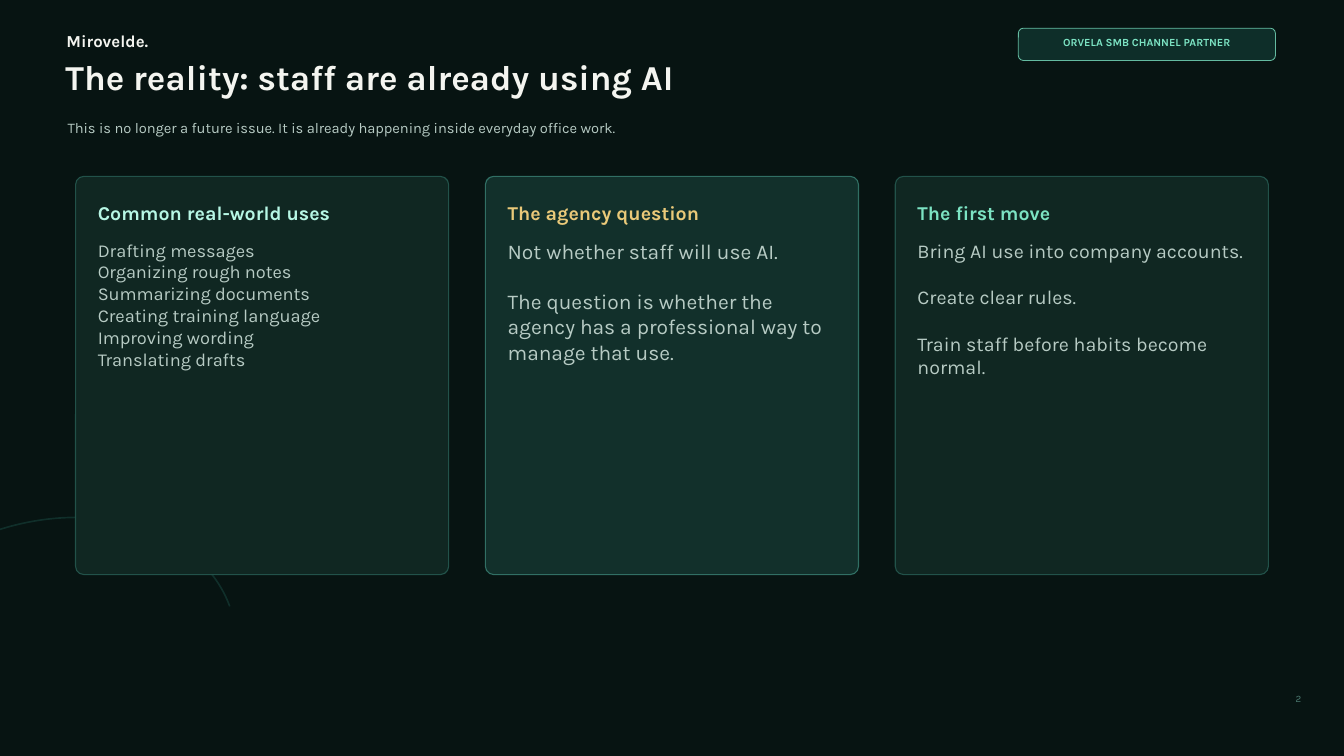
from dataclasses import dataclass

from lxml.etree import SubElement
from pptx import Presentation
from pptx.dml.color import RGBColor
from pptx.enum.shapes import MSO_SHAPE
from pptx.enum.text import MSO_ANCHOR, PP_ALIGN
from pptx.oxml.ns import qn
from pptx.shapes.autoshape import Shape
from pptx.slide import Slide
from pptx.util import Inches, Pt

FONT = "Karla"
NIGHT = RGBColor(0x07, 0x14, 0x12)
ARC = RGBColor(0x12, 0x32, 0x2D)
WHITE = RGBColor(0xF4, 0xF5, 0xF0)
BODY = RGBColor(0xB7, 0xCB, 0xC4)
MINT = RGBColor(0x7C, 0xE3, 0xC3)
PALE_MINT = RGBColor(0xB7, 0xF7, 0xE5)
GOLD = RGBColor(0xEA, 0xC9, 0x79)
PAGE = RGBColor(0x4E, 0x7D, 0x73)
BADGE_FILL = RGBColor(0x0F, 0x2F, 0x2A)
CARD_FILL = RGBColor(0x10, 0x27, 0x22)
CARD_LINE = RGBColor(0x25, 0x58, 0x4F)
FOCUS_FILL = RGBColor(0x12, 0x30, 0x2B)
FOCUS_LINE = RGBColor(0x35, 0x78, 0x6C)

CARD_LEFT, LAST_CARD_LEFT = 0.75, 8.88
CARD_TOP, CARD_W, CARD_H = 1.75, 3.7, 3.95
CARD_PAD = 0.22
LINE_HEIGHT = 1.17  # Karla line height relative to its size

Box = tuple[float, float, float, float]


@dataclass
class Card:
    title: str
    title_color: RGBColor
    lines: list[str]
    size: float
    spaced: bool = True
    fill: RGBColor = CARD_FILL
    line: RGBColor = CARD_LINE


CARDS = [
    Card("Common real-world uses", PALE_MINT,
         ["Drafting messages", "Organizing rough notes", "Summarizing documents",
          "Creating training language", "Improving wording", "Translating drafts"],
         13, spaced=False),
    Card("The agency question", GOLD,
         ["Not whether staff will use AI.",
          "The question is whether the agency has a professional way to manage that use."],
         15, fill=FOCUS_FILL, line=FOCUS_LINE),
    Card("The first move", MINT,
         ["Bring AI use into company accounts.", "Create clear rules.",
          "Train staff before habits become normal."], 14),
]


def set_alpha(sp: Shape, tag: str, percent: int) -> None:
    """Set the opacity of the fill (a:solidFill) or the line (a:ln/a:solidFill)."""
    color = sp.element.spPr.find(tag, sp.element.nsmap)[0]
    SubElement(color, qn("a:alpha"), val=str(percent * 1000))


def add_shape(s: Slide, kind: MSO_SHAPE, box: Box, line: RGBColor, width: float,
              line_alpha: int, fill: RGBColor | None = None) -> Shape:
    sp = s.shapes.add_shape(kind, *map(Inches, box))
    sp.shadow.inherit = False
    if fill is None:
        sp.fill.background()
    else:
        sp.fill.solid()
        sp.fill.fore_color.rgb = fill
    sp.line.color.rgb = line
    sp.line.width = Pt(width)
    set_alpha(sp, "a:ln/a:solidFill", line_alpha)
    return sp


def add_text(s: Slide, text: str | list[str], box: Box, *, size: float, color: RGBColor,
             bold: bool = False, align: PP_ALIGN = PP_ALIGN.LEFT,
             anchor: MSO_ANCHOR = MSO_ANCHOR.MIDDLE, space_before: float = 0) -> None:
    tf = s.shapes.add_textbox(*map(Inches, box)).text_frame
    tf.word_wrap = True
    tf.vertical_anchor = anchor
    tf.margin_left = tf.margin_right = tf.margin_top = tf.margin_bottom = 0
    for i, line in enumerate([text] if isinstance(text, str) else text):
        p = tf.add_paragraph() if i else tf.paragraphs[0]
        p.alignment = align
        if i and space_before:
            p.space_before = Pt(space_before)
        r = p.add_run()
        r.text = line
        r.font.name, r.font.size, r.font.bold = FONT, Pt(size), bold
        r.font.color.rgb = color


def add_card(s: Slide, card: Card, left: float) -> None:
    sp = add_shape(s, MSO_SHAPE.ROUNDED_RECTANGLE, (left, CARD_TOP, CARD_W, CARD_H),
                   card.line, 0.8, 90, card.fill)
    sp.adjustments[0] = 0.022
    x, w = left + CARD_PAD, CARD_W - 2 * CARD_PAD
    add_text(s, card.title, (x, CARD_TOP + 0.18, w, 0.35),
             size=14, color=card.title_color, bold=True)
    add_text(s, card.lines, (x, CARD_TOP + 0.62, w, 3.13), size=card.size, color=BODY,
             anchor=MSO_ANCHOR.TOP,
             space_before=card.size * LINE_HEIGHT if card.spaced else 0)


def main() -> None:
    prs = Presentation()
    prs.slide_width, prs.slide_height = Inches(13.33), Inches(7.5)
    s = prs.slides.add_slide(prs.slide_layouts[6])

    # Background and decorative arc
    s.background.fill.solid()
    s.background.fill.fore_color.rgb = NIGHT
    arc = add_shape(s, MSO_SHAPE.ARC, (-1.6, 5.2, 4, 3), ARC, 1.2, 90)
    arc.rotation = 340

    # Header
    add_text(s, "Mirovelde.", (0.66, 0.28, 1.8, 0.25), size=12, color=WHITE, bold=True)
    badge = add_shape(s, MSO_SHAPE.ROUNDED_RECTANGLE, (10.1, 0.28, 2.55, 0.32),
                      MINT, 0.6, 80, BADGE_FILL)
    badge.adjustments[0] = 0.156
    set_alpha(badge, "a:solidFill", 98)
    add_text(s, "ORVELA SMB CHANNEL PARTNER", (10.2, 0.34, 2.35, 0.16),
             size=7.8, color=MINT, bold=True, align=PP_ALIGN.CENTER)
    add_text(s, "The reality: staff are already using AI", (0.65, 0.48, 9.6, 0.55),
             size=25, color=WHITE, bold=True)
    add_text(s, "This is no longer a future issue. It is already happening inside "
             "everyday office work.", (0.67, 1.09, 8.9, 0.35), size=10.5, color=BODY)

    # Cards
    pitch = (LAST_CARD_LEFT - CARD_LEFT) / (len(CARDS) - 1)
    for i, card in enumerate(CARDS):
        add_card(s, card, CARD_LEFT + i * pitch)

    # Page number
    add_text(s, "2", (12.85, 6.87, 0.4, 0.23), size=7, color=PAGE, anchor=MSO_ANCHOR.TOP)

    prs.save("out.pptx")


if __name__ == "__main__":
    main()
